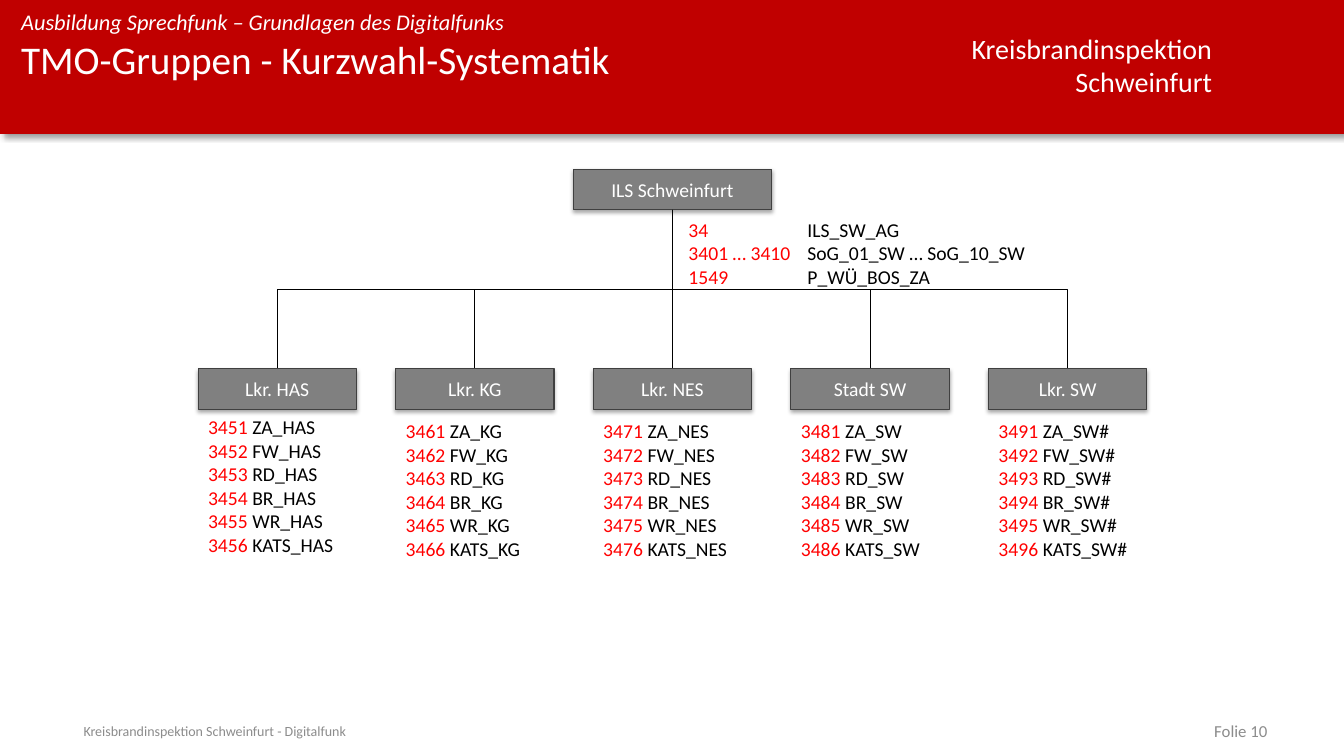
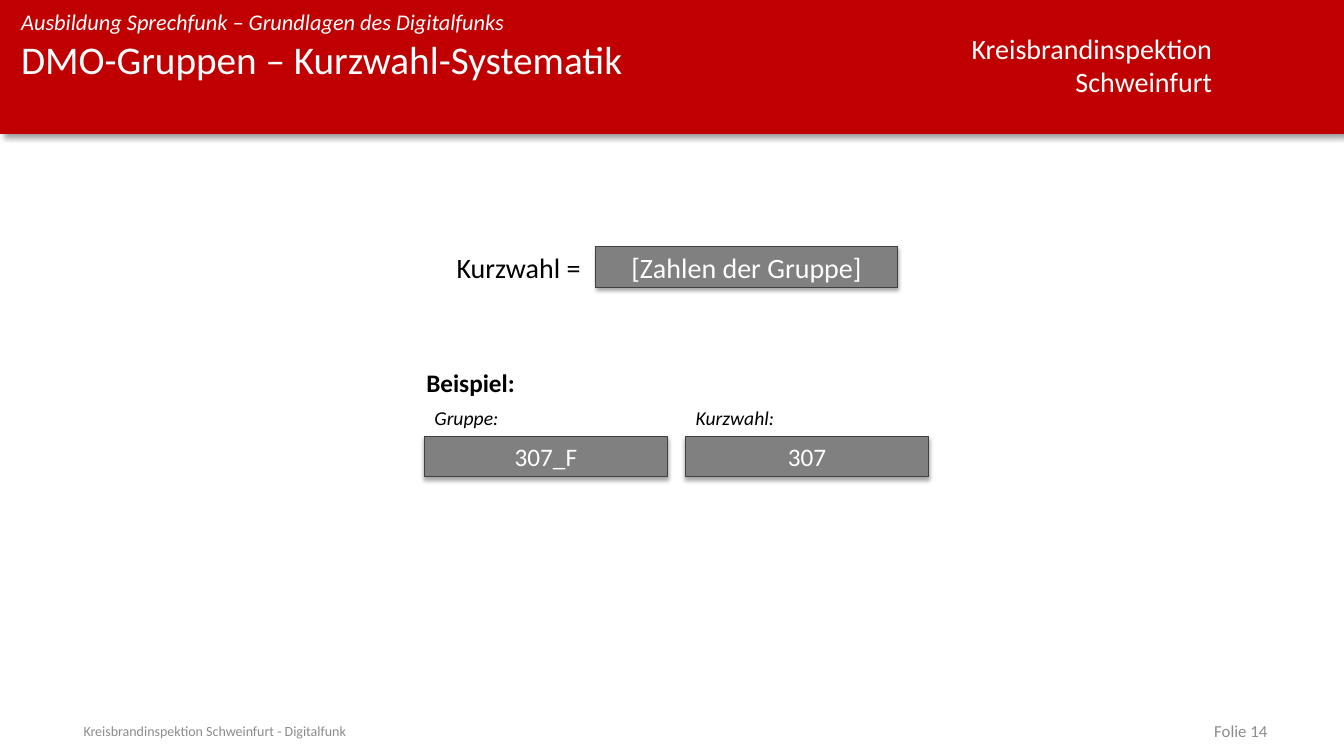
"""Build two slides on the short-dial scheme of digital radio groups."""
import pptx
import pptx.dml.color
import pptx.enum.shapes
import pptx.enum.text
import pptx.oxml
import pptx.oxml.ns
import pptx.util

Inches = pptx.util.Inches
Pt = pptx.util.Pt
Align = pptx.enum.text.PP_ALIGN
Anchor = pptx.enum.text.MSO_ANCHOR

FONT = "Calibri"
RED, BRIGHT_RED, WHITE, BLACK = "C00000", "FF0000", "FFFFFF", "000000"
BOX_FILL, BOX_LINE, FOOTER_GREY = "808080", "404040", "8C8C8C"
BAND_SHADOW = (40, 4, 3, 45)
BOX_SHADOW = (35, 3.1, 1.8, 90)
BOX_HEIGHT = 0.4

ROOT_TOP, ROOT_WIDTH = 1.68, 1.97
DISTRICT_TOP, DISTRICT_WIDTH, DISTRICT_PITCH = 3.66, 1.57, 1.96
TREE_CENTER = 6.67
UNITS = ("ZA", "FW", "RD", "BR", "WR", "KATS")
DISTRICTS = (
    ("Lkr. HAS", "HAS", 4.07),
    ("Lkr. KG", "KG", 4.11),
    ("Lkr. NES", "NES", 4.11),
    ("Stadt SW", "SW", 4.11),
    ("Lkr. SW", "SW#", 4.11),
)
CONTROL_CENTRE_GROUPS = (
    ("34", "ILS_SW_AG"),
    ("3401 … 3410", "SoG_01_SW … SoG_10_SW"),
    ("1549", "P_WÜ_BOS_ZA"),
)


def color(value):
    """Return the RGB colour for a hex string."""
    return pptx.dml.color.RGBColor.from_string(value)


def add_run(paragraph, text, size, text_color, bold=False, italic=False):
    """Append one formatted run to a paragraph."""
    run = paragraph.add_run()
    run.text = text
    run.font.name = FONT
    run.font.size = Pt(size)
    run.font.bold = bold
    run.font.italic = italic
    run.font.color.rgb = color(text_color)


def set_frame(frame, anchor=Anchor.TOP, margin=None):
    """Set wrapping, anchoring and optional equal margins."""
    frame.word_wrap = True
    frame.auto_size = pptx.enum.text.MSO_AUTO_SIZE.NONE
    frame.vertical_anchor = anchor
    if margin is not None:
        frame.margin_left = frame.margin_right = Inches(margin)
        frame.margin_top = frame.margin_bottom = Inches(margin)


def add_text(slide, bounds, lines, size, text_color=BLACK, align=Align.LEFT,
             anchor=Anchor.TOP, margin=None, tab=None, **style):
    """Add a text box whose lines are strings or lists of (text, colour)."""
    frame = slide.shapes.add_textbox(*map(Inches, bounds)).text_frame
    set_frame(frame, anchor, margin)
    for index, line in enumerate(lines):
        paragraph = frame.add_paragraph() if index else frame.paragraphs[0]
        paragraph.alignment = align
        if tab is not None:
            add_tab(paragraph, tab)
        runs = [(line, text_color)] if isinstance(line, str) else line
        for text, run_color in runs:
            add_run(paragraph, text, size, run_color, **style)


def add_tab(paragraph, position):
    """Add a left tab stop to a paragraph."""
    properties = paragraph._p.get_or_add_pPr()
    properties.append(pptx.oxml.parse_xml(
        f'<a:tabLst {pptx.oxml.ns.nsdecls("a")}>'
        f'<a:tab pos="{Inches(position)}" algn="l"/></a:tabLst>'))


def add_shadow(shape, opacity, blur, distance, angle):
    """Give a shape a black outer shadow."""
    shape.shadow.inherit = False
    effects = shape.element.spPr.find(pptx.oxml.ns.qn("a:effectLst"))
    effects.append(pptx.oxml.parse_xml(
        f'<a:outerShdw {pptx.oxml.ns.nsdecls("a")} blurRad="{Pt(blur)}" '
        f'dist="{Pt(distance)}" dir="{angle * 60000}" algn="tl" rotWithShape="0">'
        f'<a:srgbClr val="{BLACK}"><a:alpha val="{opacity * 1000}"/></a:srgbClr>'
        '</a:outerShdw>'))


def add_rectangle(slide, bounds, fill, shadow, line=None):
    """Add a filled rectangle with a shadow."""
    shape = slide.shapes.add_shape(
        pptx.enum.shapes.MSO_SHAPE.RECTANGLE, *map(Inches, bounds))
    shape.fill.solid()
    shape.fill.fore_color.rgb = color(fill)
    if line:
        shape.line.color.rgb = color(line)
        shape.line.width = Pt(0.75)
    else:
        shape.line.fill.background()
    add_shadow(shape, *shadow)
    return shape


def add_box(slide, left, top, width, text, size):
    """Add a grey box with a centred white label."""
    shape = add_rectangle(slide, (left, top, width, BOX_HEIGHT),
                          BOX_FILL, BOX_SHADOW, BOX_LINE)
    set_frame(shape.text_frame, Anchor.MIDDLE)
    paragraph = shape.text_frame.paragraphs[0]
    paragraph.alignment = Align.CENTER
    add_run(paragraph, text, size, WHITE)


def add_branch(slide, start_x, start_y, end_x, end_y):
    """Add an elbow connector that leaves and arrives vertically."""
    center_x, center_y = (start_x + end_x) / 2, (start_y + end_y) / 2
    half_length, half_shift = (end_y - start_y) / 2, (end_x - start_x) / 2
    connector = slide.shapes.add_connector(
        pptx.enum.shapes.MSO_CONNECTOR.ELBOW,
        Inches(center_x - half_length), Inches(center_y + half_shift),
        Inches(center_x + half_length), Inches(center_y - half_shift))
    connector.line.color.rgb = color(BLACK)
    connector.line.width = Pt(0.75)
    properties = connector.element.spPr
    properties.find(pptx.oxml.ns.qn("a:xfrm")).set("rot", str(90 * 60000))
    properties.append(pptx.oxml.parse_xml(
        f'<a:effectLst {pptx.oxml.ns.nsdecls("a")}/>'))


def add_title(slide, band, text):
    """Format the title placeholder and raise it above the band."""
    title = slide.shapes.title
    title.left, title.top = Inches(0.21), Inches(0.35)
    title.width, title.height = Inches(8.43), Inches(0.99)
    set_frame(title.text_frame, margin=0)
    paragraph = title.text_frame.paragraphs[0]
    paragraph.alignment = Align.LEFT
    add_run(paragraph, text, 28, WHITE)
    band.element.addnext(title.element)


def add_base_slide(presentation, title, number):
    """Add a slide with the shared band, title and footer."""
    slide = presentation.slides.add_slide(presentation.slide_layouts[5])
    band = add_rectangle(slide, (0, 0, 13.33, 1.33), RED, BAND_SHADOW)
    add_title(slide, band, title)
    add_text(slide, (9.31, 0.26, 2.81, 0.77),
             ["Kreisbrandinspektion", "Schweinfurt"], 20, WHITE, Align.RIGHT)
    add_text(slide, (0.21, 0.08, 8.43, 0.27),
             ["Ausbildung Sprechfunk – Grundlagen des Digitalfunks"],
             16, WHITE, margin=0, italic=True)
    add_text(slide, (0.73, 7.15, 8.05, 0.2),
             ["Kreisbrandinspektion Schweinfurt - Digitalfunk"],
             10, FOOTER_GREY, anchor=Anchor.MIDDLE)
    add_text(slide, (9.56, 7.15, 3.11, 0.2), [f"Folie {number}"],
             12, FOOTER_GREY, Align.RIGHT, Anchor.MIDDLE)
    return slide


def add_district(slide, index, name, suffix, list_top):
    """Add one district with its branch, box and group list."""
    center = TREE_CENTER + (index - len(DISTRICTS) // 2) * DISTRICT_PITCH
    left = center - DISTRICT_WIDTH / 2
    add_branch(slide, TREE_CENTER, ROOT_TOP + BOX_HEIGHT, center, DISTRICT_TOP)
    add_box(slide, left, DISTRICT_TOP, DISTRICT_WIDTH, name, 14)
    first_number = 3451 + 10 * index
    lines = [[(str(number), BRIGHT_RED), (f" {unit}_{suffix}", BLACK)]
             for number, unit in enumerate(UNITS, first_number)]
    add_text(slide, (left, list_top, DISTRICT_WIDTH, 1.51), lines, 14)


def build_tmo_slide(presentation):
    """Build the tree of TMO groups."""
    slide = add_base_slide(presentation, "TMO-Gruppen - Kurzwahl-Systematik", 10)
    add_box(slide, TREE_CENTER - ROOT_WIDTH / 2, ROOT_TOP, ROOT_WIDTH,
            "ILS Schweinfurt", 14)
    for index, district in enumerate(DISTRICTS):
        add_district(slide, index, *district)
    lines = [[(f"{number}\t", BRIGHT_RED), (group, BLACK)]
             for number, group in CONTROL_CENTRE_GROUPS]
    add_text(slide, (6.73, 2.11, 3.8, 0.81), lines, 14, tab=1.18)


def build_dmo_slide(presentation):
    """Build the DMO rule and its example."""
    slide = add_base_slide(presentation, "DMO-Gruppen – Kurzwahl-Systematik", 14)
    add_box(slide, 5.91, 2.45, 2.99, "[Zahlen der Gruppe]", 20)
    add_text(slide, (4.43, 2.44, 1.47, 0.44), ["Kurzwahl ="], 20)
    add_text(slide, (4.13, 3.59, 1.4, 0.4), ["Beispiel:"], 18, bold=True)
    examples = ((4.21, "Gruppe:", "307_F"), (6.8, "Kurzwahl:", "307"))
    for left, label, value in examples:
        add_text(slide, (left, 3.98, 1.39, 0.34), [label], 14, italic=True)
        add_box(slide, left, 4.33, 2.41, value, 18)


def main():
    """Create and save the presentation."""
    presentation = pptx.Presentation()
    presentation.slide_width = Inches(13.33)
    presentation.slide_height = Inches(7.5)
    build_tmo_slide(presentation)
    build_dmo_slide(presentation)
    presentation.save("out.pptx")


if __name__ == "__main__":
    main()
